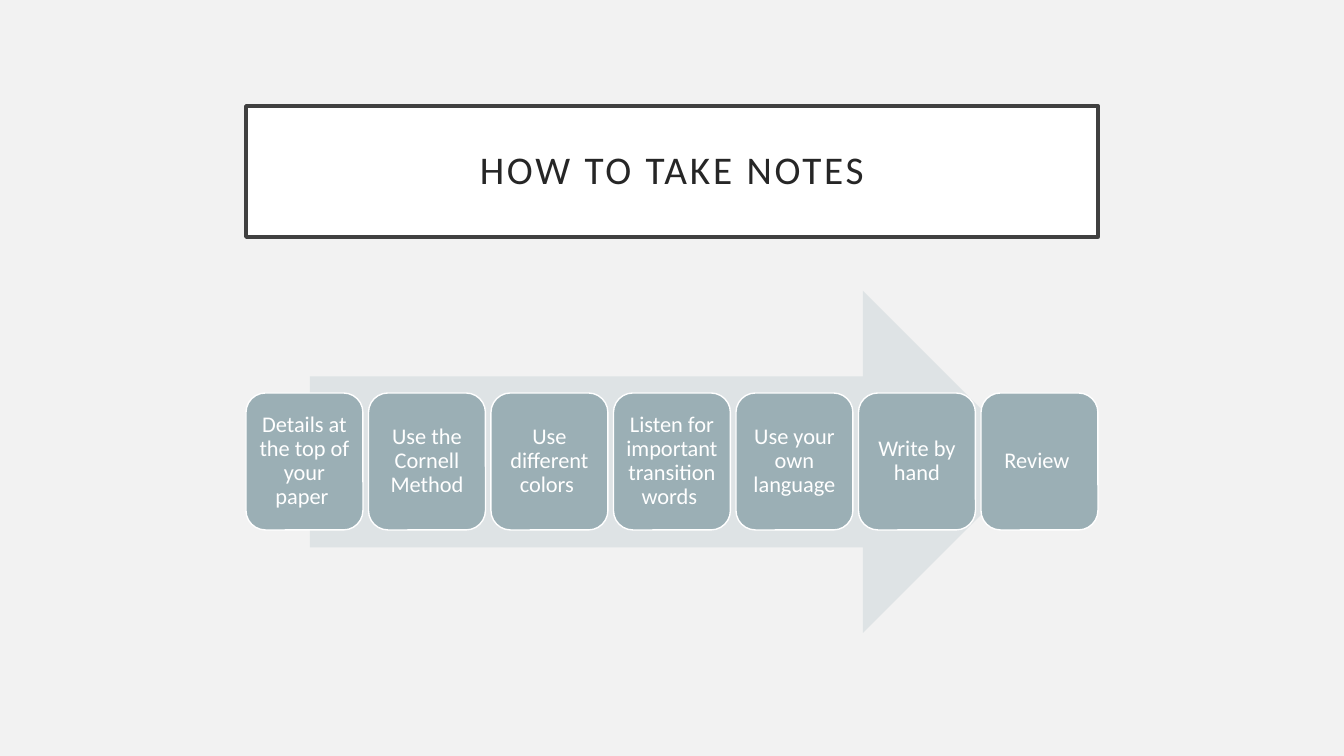
from pptx import Presentation
from pptx.dml.color import RGBColor
from pptx.enum.shapes import MSO_SHAPE
from pptx.enum.text import MSO_ANCHOR, MSO_AUTO_SIZE, PP_ALIGN
from pptx.util import Emu, Pt

RIGHT_ARROW = MSO_SHAPE.RIGHT_ARROW
ROUNDED_RECTANGLE = MSO_SHAPE.ROUNDED_RECTANGLE
MIDDLE = MSO_ANCHOR.MIDDLE
CENTER = PP_ALIGN.CENTER
NO_AUTOFIT = MSO_AUTO_SIZE.NONE

BACKGROUND = RGBColor(0xF2, 0xF2, 0xF2)
WHITE = RGBColor(0xFF, 0xFF, 0xFF)
FRAME = RGBColor(0x40, 0x40, 0x40)
TITLE_INK = RGBColor(0x26, 0x26, 0x26)
ARROW = RGBColor(0xDE, 0xE3, 0xE5)
STEP = RGBColor(0x9B, 0xAF, 0xB5)

FONT = "Calibri"
SLIDE_WIDTH, SLIDE_HEIGHT = 1344, 756
ROW_LEFT, ROW_WIDTH = 246, 852
STEP_TOP, STEP_WIDTH, STEP_HEIGHT = 393, 117, 137
STEPS = [
    "Details at the top of your paper ",
    "Use the Cornell Method",
    "Use different colors ",
    "Listen for important transition words ",
    "Use your own language",
    "Write by hand",
    "Review ",
]


def px(length):
    return Emu(round(length * 12192000 / SLIDE_WIDTH))


def write_centered(shape, text, size, color, inset):
    frame = shape.text_frame
    frame.word_wrap = True
    frame.auto_size = NO_AUTOFIT
    frame.vertical_anchor = MIDDLE
    frame.margin_left = frame.margin_right = px(inset)
    frame.margin_top = frame.margin_bottom = px(inset)
    paragraph = frame.paragraphs[0]
    paragraph.alignment = CENTER
    paragraph.line_spacing = 0.9
    run = paragraph.add_run()
    run.text = text
    run.font.name = FONT
    run.font.size = Pt(size)
    run.font.color.rgb = color
    return run


presentation = Presentation()
presentation.slide_width = px(SLIDE_WIDTH)
presentation.slide_height = px(SLIDE_HEIGHT)
slide = presentation.slides.add_slide(presentation.slide_layouts[5])
slide.background.fill.solid()
slide.background.fill.fore_color.rgb = BACKGROUND

title = slide.shapes.title
title.left, title.top = px(ROW_LEFT), px(106)
title.width, title.height = px(ROW_WIDTH), px(131)
title.fill.solid()
title.fill.fore_color.rgb = WHITE
title.line.color.rgb = FRAME
title.line.width = Pt(2.5)
title_run = write_centered(title, "HOW TO TAKE NOTES", 28, TITLE_INK, 20)
title_run.font._element.set("spc", "200")

process = slide.shapes.add_group_shape()
arrow = process.shapes.add_shape(RIGHT_ARROW, px(310), px(291), px(724), px(342))
arrow.shadow.inherit = False
arrow.fill.solid()
arrow.fill.fore_color.rgb = ARROW
arrow.line.fill.background()

pitch = (ROW_WIDTH - STEP_WIDTH) / (len(STEPS) - 1)
for index, text in enumerate(STEPS):
    step = process.shapes.add_shape(
        ROUNDED_RECTANGLE,
        px(ROW_LEFT + index * pitch), px(STEP_TOP),
        px(STEP_WIDTH), px(STEP_HEIGHT),
    )
    step.shadow.inherit = False
    step.fill.solid()
    step.fill.fore_color.rgb = STEP
    step.line.color.rgb = WHITE
    step.line.width = Pt(1)
    write_centered(step, text, 16, WHITE, 7)

presentation.save("out.pptx")
